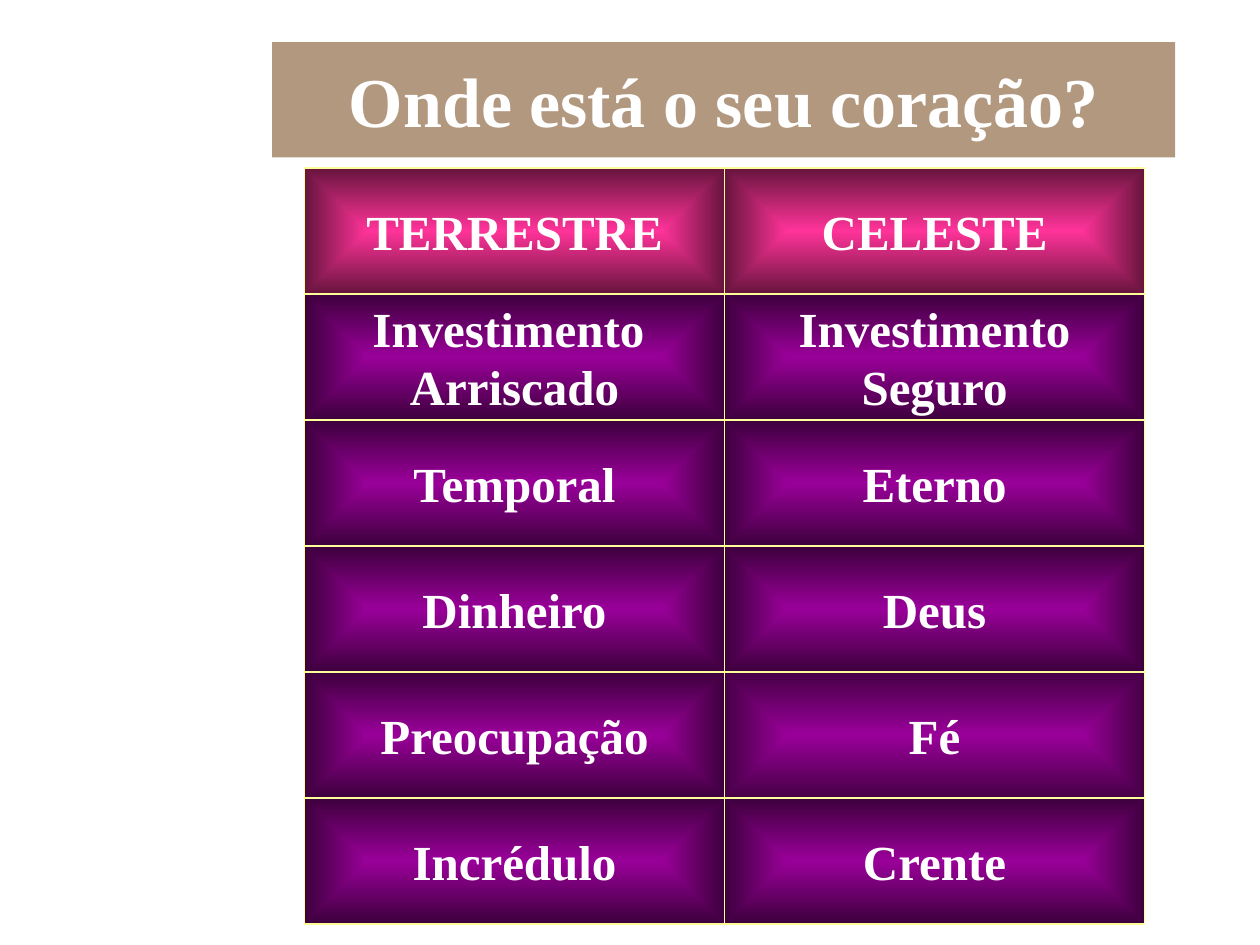
from dataclasses import dataclass

from lxml.etree import SubElement
from pptx import Presentation
from pptx.dml.color import RGBColor
from pptx.enum.shapes import MSO_SHAPE
from pptx.enum.text import MSO_ANCHOR, PP_ALIGN
from pptx.oxml import parse_xml
from pptx.oxml.ns import nsdecls, qn
from pptx.slide import Slide
from pptx.text.text import TextFrame
from pptx.util import Pt


@dataclass(frozen=True)
class Glow:
    center: str
    edge: str


@dataclass(frozen=True)
class Theme:
    font: str = "Times New Roman"
    title_size: int = 40
    cell_size: int = 28
    text: str = "FFFFFF"
    banner: str = "663300"
    border: str = "FFFF99"
    heading: Glow = Glow("FF3399", "66143D")
    purple: Glow = Glow("990099", "3D003D")
    soft_purple: Glow = Glow("990099", "460046")


@dataclass(frozen=True)
class Cell:
    text: str
    glow: Glow


THEME = Theme()
GRID_LEFT, GRID_TOP = 174, 96
CELL_WIDTH, CELL_HEIGHT = 240, 72

CONTRASTS = [
    (Cell("TERRESTRE", THEME.heading), Cell("CELESTE", THEME.heading)),
    (Cell("Investimento \nArriscado", THEME.purple),
     Cell("Investimento\nSeguro", THEME.purple)),
    (Cell("Temporal", THEME.purple), Cell("Eterno", THEME.purple)),
    (Cell("Dinheiro", THEME.purple), Cell("Deus", THEME.purple)),
    (Cell("Preocupação", THEME.purple), Cell("Fé", THEME.soft_purple)),
    (Cell("Incrédulo", THEME.purple), Cell("Crente", THEME.purple)),
]


def write_text(frame: TextFrame, text: str, size: int, wrap: bool) -> None:
    frame.text = text
    frame.word_wrap = wrap
    frame.vertical_anchor = MSO_ANCHOR.MIDDLE
    for paragraph in frame.paragraphs:
        paragraph.alignment = PP_ALIGN.CENTER
        for run in paragraph.runs:
            run.font.name = THEME.font
            run.font.size = Pt(size)
            run.font.bold = True
            run.font.color.rgb = RGBColor.from_string(THEME.text)


def glow_fill(glow: Glow):
    """Gradient running from the centre of a rectangle to its edges."""
    return parse_xml(
        f'<a:gradFill {nsdecls("a")} rotWithShape="0"><a:gsLst>'
        f'<a:gs pos="0"><a:srgbClr val="{glow.center}"/></a:gs>'
        f'<a:gs pos="100000"><a:srgbClr val="{glow.edge}"/></a:gs>'
        '</a:gsLst><a:path path="shape">'
        '<a:fillToRect l="50000" t="50000" r="50000" b="50000"/>'
        '</a:path></a:gradFill>'
    )


def add_title(slide: Slide, text: str) -> None:
    title = slide.shapes.title
    title.left, title.top = Pt(155.5), Pt(24)
    title.width, title.height = Pt(516), Pt(66)
    title.fill.solid()
    title.fill.fore_color.rgb = RGBColor.from_string(THEME.banner)
    # Half-transparent banner
    banner_color = title.element.spPr.find(".//" + qn("a:srgbClr"))
    SubElement(banner_color, qn("a:alpha"), val="50000")
    write_text(title.text_frame, text, THEME.title_size, wrap=True)


def add_cell(slide: Slide, cell: Cell, row: int, column: int) -> None:
    box = slide.shapes.add_shape(
        MSO_SHAPE.RECTANGLE,
        Pt(GRID_LEFT + column * CELL_WIDTH), Pt(GRID_TOP + row * CELL_HEIGHT),
        Pt(CELL_WIDTH), Pt(CELL_HEIGHT),
    )
    box.shadow.inherit = False
    box.line.color.rgb = RGBColor.from_string(THEME.border)
    box.line.width = Pt(0.75)
    box.element.spPr.find(qn("a:prstGeom")).addnext(glow_fill(cell.glow))
    write_text(box.text_frame, cell.text, THEME.cell_size, wrap=False)


def main() -> None:
    presentation = Presentation()
    presentation.slide_width, presentation.slide_height = Pt(720), Pt(540)
    slide = presentation.slides.add_slide(presentation.slide_layouts[5])

    # Title banner
    add_title(slide, "Onde está o seu coração?")

    # Two-column comparison
    for row, pair in enumerate(CONTRASTS):
        for column, cell in enumerate(pair):
            add_cell(slide, cell, row, column)

    presentation.save("out.pptx")


if __name__ == "__main__":
    main()
